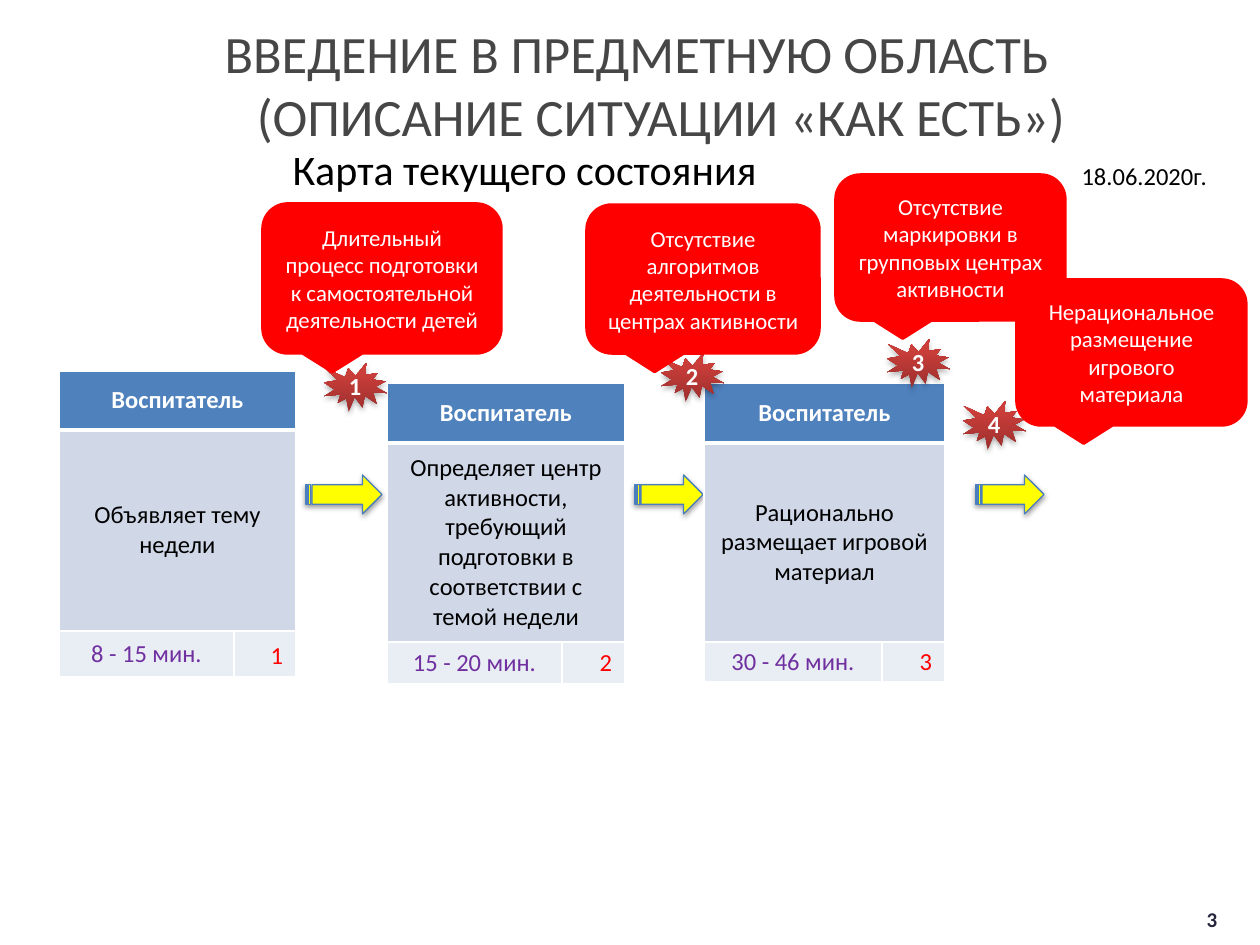
from dataclasses import dataclass

from lxml import etree
from pptx import Presentation
from pptx.dml.color import RGBColor
from pptx.enum.shapes import MSO_SHAPE
from pptx.enum.text import MSO_ANCHOR, MSO_AUTO_SIZE, PP_ALIGN
from pptx.oxml.ns import qn
from pptx.util import Pt

SCALE = 914400 / 126
LEFT, CENTER, RIGHT = PP_ALIGN.LEFT, PP_ALIGN.CENTER, PP_ALIGN.RIGHT
MIDDLE, BOTTOM = MSO_ANCHOR.MIDDLE, MSO_ANCHOR.BOTTOM
FIXED = MSO_AUTO_SIZE.NONE
ARROW = MSO_SHAPE.STRIPED_RIGHT_ARROW
SEAL = MSO_SHAPE.EXPLOSION1
CALLOUT = MSO_SHAPE.ROUNDED_RECTANGULAR_CALLOUT


@dataclass(frozen=True)
class Theme:
    font: str = "Calibri"
    black: str = "000000"
    white: str = "FFFFFF"
    gray: str = "464646"
    navy: str = "24263C"
    red: str = "FF0000"
    yellow: str = "FFFF00"
    edge: str = "4B7EBC"
    purple: str = "7030A0"
    header: str = "4F81BD"
    body: str = "D0D8E8"
    foot: str = "E9EDF4"
    seal: tuple = ((0, "9C2F2D"), (80, "CB3E3A"), (100, "CE3B37"))
    head_size: int = 30
    title_size: int = 24
    text_size: int = 14
    note_size: int = 13
    page_size: int = 12


THEME = Theme()


def px(*values):
    sizes = [round(v * SCALE) for v in values]
    return sizes if len(sizes) > 1 else sizes[0]


def rgb(color):
    return RGBColor.from_string(color)


def node(parent, tag, **attrs):
    return etree.SubElement(parent, qn(tag), {k: str(v) for k, v in attrs.items()})


def style(target, size, color, bold=False):
    font = target.font
    font.name, font.size, font.bold = THEME.font, Pt(size), bold
    font.color.rgb = rgb(color)


def write(frame, lines, size, color, bold=False, align=CENTER):
    frame.word_wrap = True
    frame.auto_size = FIXED
    frame.vertical_anchor = MIDDLE
    frame.text = "\n".join(lines)
    for para in frame.paragraphs:
        para.alignment = align
        style(para, size, color, bold)


def add_text(slide, box, lines, size, color, bold=False):
    frame = slide.shapes.add_textbox(*px(*box)).text_frame
    write(frame, lines, size, color, bold)
    return frame


def add_shape(slide, kind, box, fill, line=None, width=0):
    shape = slide.shapes.add_shape(kind, *px(*box))
    shape.shadow.inherit = False
    shape.fill.solid()
    shape.fill.fore_color.rgb = rgb(fill)
    if line:
        shape.line.color.rgb = rgb(line)
        shape.line.width = Pt(width)
    else:
        shape.line.fill.background()
    return shape


def add_shadow(shape, dist, alpha):
    effects = shape._element.spPr.find(qn("a:effectLst"))
    outer = node(effects, "a:outerShdw", blurRad=Pt(3.1), dist=Pt(dist),
                 dir=90 * 60000, rotWithShape=0)
    color = node(outer, "a:srgbClr", val=THEME.black)
    node(color, "a:alpha", val=alpha * 1000)


def add_arrow(slide, left, width):
    shape = add_shape(slide, ARROW, (left, 475, width, 39),
                      THEME.yellow, THEME.edge, 0.75)
    add_shadow(shape, 1.6, 38)


def add_seal(slide, number, left, top):
    shape = add_shape(slide, SEAL, (left, top, 63, 49), THEME.seal[0][1])
    # Three-stop gradient in place of the solid fill
    props = shape._element.spPr
    grad = etree.Element(qn("a:gradFill"), rotWithShape="1")
    stops = node(grad, "a:gsLst")
    for pos, color in THEME.seal:
        node(node(stops, "a:gs", pos=pos * 1000), "a:srgbClr", val=color)
    node(grad, "a:lin", ang=270 * 60000, scaled=0)
    props.replace(props.find(qn("a:solidFill")), grad)
    add_shadow(shape, 1.8, 35)
    frame = shape.text_frame
    frame.margin_left = frame.margin_right = 0
    frame.margin_top = frame.margin_bottom = 0
    write(frame, [str(number)], THEME.text_size, THEME.white, True)


def add_note(slide, text, box):
    shape = add_shape(slide, CALLOUT, box, THEME.red, THEME.red, 2)
    write(shape.text_frame, [text], THEME.note_size, THEME.white)


def set_edges(cell, top, bottom):
    props = cell._tc.get_or_add_tcPr()
    for side, width in (("L", 1), ("R", 1), ("T", top), ("B", bottom)):
        line = node(props, f"a:ln{side}", w=Pt(width))
        node(node(line, "a:solidFill"), "a:srgbClr", val=THEME.white)


def add_step(slide, number, action, time, left, top, cols, rows, pad):
    size = (sum(cols), sum(rows))
    table = slide.shapes.add_table(3, 2, *px(left, top, *size)).table
    table.horz_banding = False
    for col, width in zip(table.columns, cols):
        col.width = px(width)
    for row, height in zip(table.rows, rows):
        row.height = px(height)
    # One look per row: fill, text colour, top and bottom edge
    looks = ((THEME.header, THEME.white, 1, 3),
             (THEME.body, THEME.black, 3, 1),
             (THEME.foot, THEME.purple, 1, 1))
    texts = (("Воспитатель", ""), (action, ""), (time, str(number)))
    for r, (fill, color, above, below) in enumerate(looks):
        for c, text in enumerate(texts[r]):
            cell = table.cell(r, c)
            set_edges(cell, above, below)
            cell.fill.solid()
            cell.fill.fore_color.rgb = rgb(fill)
            cell.margin_left = cell.margin_right = px(13)
            cell.margin_top = cell.margin_bottom = px(pad)
            last = r == 2 and c == 1
            cell.vertical_anchor = BOTTOM if last else MIDDLE
            cell.text = text
            para = cell.text_frame.paragraphs[0]
            para.alignment = RIGHT if last else CENTER
            style(para, THEME.text_size, THEME.red if last else color, r == 0)
        if r < 2:
            table.cell(r, 0).merge(table.cell(r, 1))


def add_title(slide):
    title = slide.shapes.title
    title.left, title.top, title.width, title.height = px(28, 145, 1197, 47)
    write(title.text_frame, ["\tКарта текущего состояния"],
          THEME.title_size, THEME.black, align=LEFT)
    para = title.text_frame.paragraphs[0]
    date = para.add_run()
    date.text = "\t18.06.2020г."
    date.font.size = Pt(THEME.text_size)
    tabs = etree.Element(qn("a:tabLst"))
    for stop in (252, 1041):
        node(tabs, "a:tab", pos=px(stop), algn="l")
    props = para._p.get_or_add_pPr()
    props.find(qn("a:defRPr")).addprevious(tabs)


def add_head(slide):
    lines = ["ВВЕДЕНИЕ В ПРЕДМЕТНУЮ ОБЛАСТЬ", "(ОПИСАНИЕ СИТУАЦИИ «КАК ЕСТЬ»)"]
    frame = add_text(slide, (63, 26, 1197, 116), lines,
                     THEME.head_size, THEME.gray)
    # The second line sits a little to the right of the first
    shift = 48
    frame.margin_right = px(13 + shift)
    frame.paragraphs[1]._p.get_or_add_pPr().set("marL", str(px(shift)))


def main():
    deck = Presentation()
    deck.slide_width, deck.slide_height = px(1260, 945)
    slide = deck.slides.add_slide(deck.slide_layouts[5])

    # Headings and page number
    add_title(slide)
    add_text(slide, (1188, 900, 48, 39), ["3"], THEME.page_size, THEME.navy, True)
    add_head(slide)

    # Process steps and the arrows between them
    for left, width in ((306, 76), (635, 68), (976, 68)):
        add_arrow(slide, left, width)
    steps = (
        ("Объявляет тему недели", "8 - 15 мин.",
         59, 371, (175, 62), (59, 201, 46), 6),
        ("Определяет центр активности, требующий подготовки в соответствии "
         "с темой недели", "15 - 20 мин.", 387, 383, (175, 63), (60, 199, 41), 6),
        ("Рационально размещает игровой материал", "30 - 46 мин.",
         704, 383, (178, 63), (60, 199, 39), 5))
    for number, step in enumerate(steps, 1):
        add_step(slide, number, *step)

    # Numbered problems and their callouts
    spots = ((324, 363), (661, 353), (887, 339), (963, 401))
    for number, spot in enumerate(spots, 1):
        add_seal(slide, number, *spot)
    notes = (
        ("Длительный процесс подготовки к самостоятельной деятельности детей",
         (263, 204, 238, 149)),
        ("Отсутствие алгоритмов деятельности в центрах активности",
         (587, 205, 232, 148)),
        ("Отсутствие маркировки в групповых центрах активности",
         (836, 175, 229, 145)),
        ("Нерациональное размещение игрового материала",
         (1017, 280, 229, 145)))
    for text, box in notes:
        add_note(slide, text, box)

    deck.save("out.pptx")


if __name__ == "__main__":
    main()
